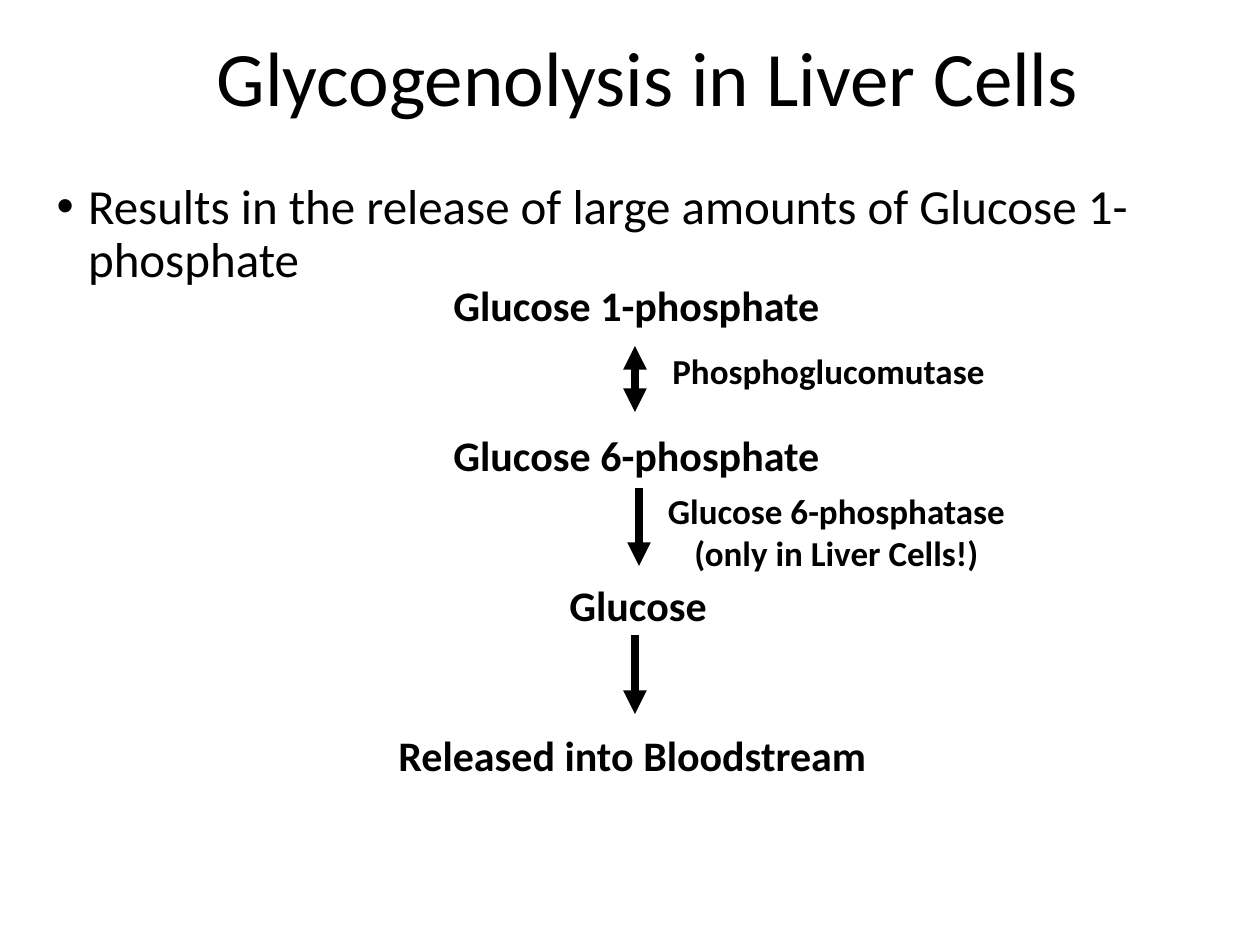
import pptx
import pptx.dml.color
import pptx.enum.shapes
import pptx.enum.text
import pptx.oxml.ns
import pptx.util
from lxml import etree

PX = 914400 // 126
BLACK = "000000"
ALIGN = pptx.enum.text.PP_ALIGN
ANCHOR = pptx.enum.text.MSO_ANCHOR

TITLE = "Glycogenolysis in Liver Cells"
SUMMARY = "Results in the release of large amounts of Glucose 1-phosphate"

# Pathway from top to bottom: text, left, width
STEPS = [
    ("Glucose 1-phosphate", 441, 396),
    ("Glucose 6-phosphate", 441, 396),
    ("Glucose", 557, 164),
    ("Released into Bloodstream", 386, 498),
]
STEP_TOP, STEP_PITCH, STEP_HEIGHT = 273, 150, 63

# Enzymes beside the arrows: lines, box, alignment
ENZYMES = [
    (["Phosphoglucomutase"], (660, 343, 340, 55), ALIGN.LEFT),
    (["Glucose 6-phosphatase", "(only in Liver Cells!)"], (654, 483, 365, 97), ALIGN.CENTER),
]

# Reactions: x, top, bottom, reversible
REACTIONS = [
    (635, 346, 412, True),
    (639, 488, 566, False),
    (635, 635, 714, False),
]


def emu(*lengths):
    return [pptx.util.Emu(length * PX) for length in lengths]


def rgb(value):
    return pptx.dml.color.RGBColor.from_string(value)


def write(shape, lines, size, bold=False, align=ALIGN.LEFT, anchor=ANCHOR.TOP,
          wrap=True, spacing=None, bullet=None, indent=0):
    frame = shape.text_frame
    frame.text = "\n".join(lines)
    frame.word_wrap = wrap
    frame.auto_size = pptx.enum.text.MSO_AUTO_SIZE.NONE
    frame.vertical_anchor = anchor
    for paragraph in frame.paragraphs:
        if bullet:
            properties = paragraph._p.get_or_add_pPr()
            properties.set("marL", str(indent))
            properties.set("indent", str(-indent))
            for tag, key, value in (("a:buFont", "typeface", "Arial"),
                                    ("a:buChar", "char", bullet)):
                etree.SubElement(properties, pptx.oxml.ns.qn(tag)).set(key, value)
        paragraph.alignment = align
        paragraph.line_spacing = spacing
        paragraph.space_before = pptx.util.Pt(0)
        for run in paragraph.runs:
            run.font.name = "Calibri"
            run.font.size = pptx.util.Pt(size)
            run.font.bold = bold
            run.font.color.rgb = rgb(BLACK)


def place(shape, box):
    shape.left, shape.top, shape.width, shape.height = emu(*box)


def add_label(slide, lines, box, size, align=ALIGN.LEFT):
    label = slide.shapes.add_textbox(*emu(*box))
    write(label, lines, size, bold=True, align=align, wrap=False)


def add_arrow(slide, x, top, bottom, reversible):
    arrow = slide.shapes.add_connector(
        pptx.enum.shapes.MSO_CONNECTOR.STRAIGHT, *emu(x, top, x, bottom))
    arrow.line.color.rgb = rgb(BLACK)
    arrow.line.width = pptx.util.Pt(4.5)
    line = arrow.line._get_or_add_ln()
    for end in ["a:headEnd", "a:tailEnd"] if reversible else ["a:tailEnd"]:
        etree.SubElement(line, pptx.oxml.ns.qn(end)).set("type", "triangle")
    etree.SubElement(arrow._element.spPr, pptx.oxml.ns.qn("a:effectLst"))


def main():
    deck = pptx.Presentation()
    deck.slide_width, deck.slide_height = emu(1260, 945)
    slide = deck.slides.add_slide(deck.slide_layouts[1])

    title, body = slide.placeholders
    place(title, (204, 28, 994, 107))
    write(title, [TITLE], 44, anchor=ANCHOR.MIDDLE, spacing=0.9)
    place(body, (44, 176, 1166, 129))
    write(body, [SUMMARY], 28, spacing=0.9, bullet="•", indent=pptx.util.Inches(0.25))

    for row, (text, left, width) in enumerate(STEPS):
        top = STEP_TOP + row * STEP_PITCH
        add_label(slide, [text], (left, top, width, STEP_HEIGHT), 24)
    for reaction in REACTIONS:
        add_arrow(slide, *reaction)
    for lines, box, align in ENZYMES:
        add_label(slide, lines, box, 20, align)

    deck.save("out.pptx")


if __name__ == "__main__":
    main()
